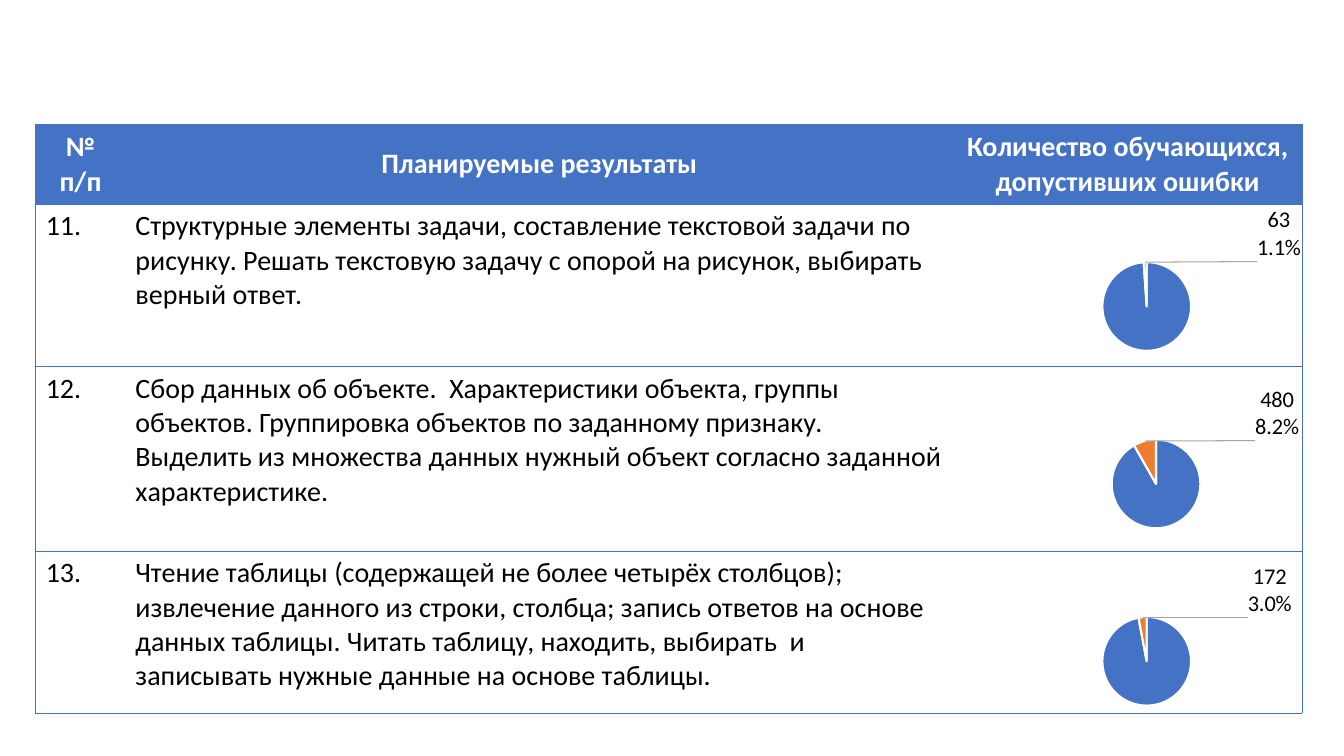
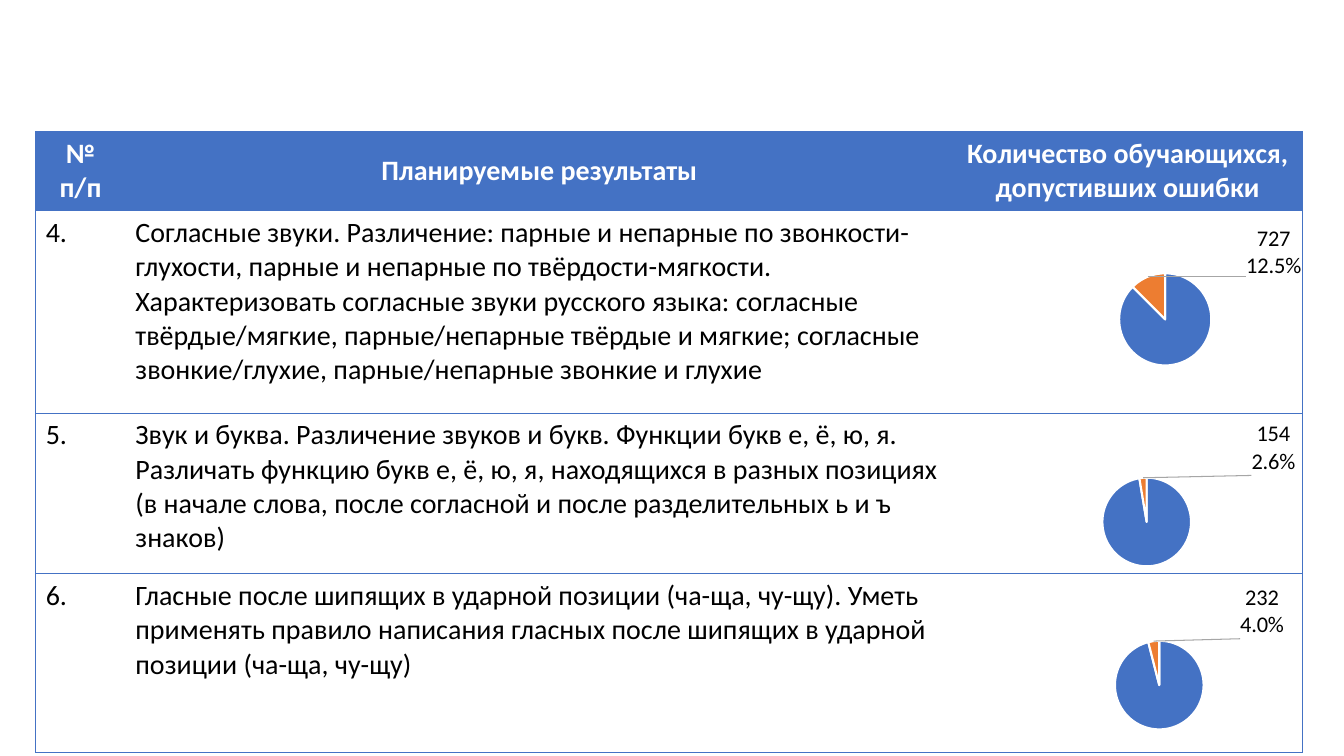
from pptx import Presentation
from pptx.chart.data import CategoryChartData
from pptx.dml.color import RGBColor
from pptx.enum.chart import XL_CHART_TYPE as ChartType
from pptx.enum.text import MSO_ANCHOR as Anchor, PP_ALIGN as Align
from pptx.oxml import parse_xml
from pptx.oxml.ns import nsdecls, qn
from pptx.util import Cm, Pt

COLORS = {"blue": "4472C4", "orange": "ED7D31", "white": "FFFFFF",
          "black": "000000", "leader": "A6A6A6"}
FONT = "Calibri"
HEADINGS = ("№ п/п", "Планируемые результаты",
            "Количество обучающихся, допустивших ошибки")
TABLE_LEFT = 0.9
COLUMN_WIDTHS = (2.26, 20.87, 8.78)
HEADER_HEIGHT = 2
CHART_WIDTH, CHART_HEIGHT = 7.85, 4.47
HEADER = {"bold": True, "color": "white", "align": Align.CENTER,
          "anchor": Anchor.MIDDLE}
BODY = {"bold": False, "color": "black", "align": Align.LEFT,
        "anchor": Anchor.TOP}

# Each row: number, planned result, height, pie.
# Each pie: left, top, values, centre, diameter, label offset;
# the last three are shares of the chart box.
SLIDES = [
    {"top": 3.14, "rows": [
        ("11.", "Структурные элементы задачи, составление текстовой задачи по "
         "рисунку. Решать текстовую задачу с опорой на рисунок, выбирать "
         "верный ответ.", 4.1,
         (24.97, 4.73, (5763, 63), (0.5, 0.67), 0.5, (0.43, 0.03))),
        ("12.", "Сбор данных об объекте.  Характеристики объекта, группы "
         "объектов. Группировка объектов по заданному признаку. Выделить из "
         "множества данных нужный объект согласно заданной характеристике.",
         4.65, (24.97, 9.2, (5346, 480), (0.53, 0.67), 0.5, (0.5, 0.03))),
        ("13.", "Чтение таблицы (содержащей не более четырёх столбцов); "
         "извлечение данного из строки, столбца; запись ответов на основе "
         "данных таблицы. Читать таблицу, находить, выбирать  и записывать "
         "нужные данные на основе таблицы.", 4.08,
         (24.97, 13.67, (5654, 172), (0.5, 0.67), 0.5, (0.48, 0.04))),
    ]},
    {"top": 3.31, "rows": [
        ("4.", "Согласные звуки. Различение: парные и непарные по "
         "звонкости-глухости, парные и непарные по твёрдости-мягкости. "
         "Характеризовать согласные звуки русского языка: согласные "
         "твёрдые/мягкие, парные/непарные твёрдые и мягкие; согласные "
         "звонкие/глухие, парные/непарные звонкие и глухие", 5.1,
         (24.97, 5.1, (5098, 727), (0.56, 0.66), 0.52, (0.5, 0.05))),
        ("5.", "Звук и буква. Различение звуков и букв. Функции букв е, ё, ю, "
         "я. Различать функцию букв е, ё, ю, я, находящихся в разных позициях "
         "(в начале слова, после согласной и после разделительных ь и ъ "
         "знаков)", 4.05,
         (24.97, 10.16, (5671, 154), (0.5, 0.67), 0.5, (0.42, 0.02))),
        ("6.", "Гласные после шипящих в ударной позиции (ча-ща, чу-щу). Уметь "
         "применять правило написания гласных после шипящих в ударной позиции "
         "(ча-ща, чу-щу)", 4.5,
         (25.13, 14.27, (5593, 232), (0.52, 0.67), 0.5, (0.42, 0.02))),
    ]},
]


def rgb(name):
    return RGBColor.from_string(COLORS[name])


def set_font(font, **values):
    font.color.rgb = rgb(values.pop("color"))
    for attribute, value in values.items():
        setattr(font, attribute, value)


def set_borders(cell, shown):
    """Draw thin blue lines on the shown sides and none on the others."""
    properties = cell._tc.get_or_add_tcPr()
    line = f'<a:solidFill><a:srgbClr val="{COLORS["blue"]}"/></a:solidFill>'
    for position, side in enumerate("LRTB"):
        fill = line if side in shown else "<a:noFill/>"
        properties.insert(position, parse_xml(
            f'<a:ln{side} {nsdecls("a")} w="6350">{fill}</a:ln{side}>'))


def fill_cell(cell, text, style):
    cell.vertical_anchor = style["anchor"]
    paragraph = cell.text_frame.paragraphs[0]
    paragraph.alignment = style["align"]
    if text:
        run = paragraph.add_run()
        run.text = text
        set_font(run.font, name=FONT, size=Pt(20), bold=style["bold"],
                 color=style["color"])
    if style is HEADER:
        cell.fill.solid()
        cell.fill.fore_color.rgb = rgb("blue")
    else:
        cell.fill.background()


def add_results_table(slide, top, rows):
    lines = [HEADINGS] + [(number, result, "") for number, result, *_ in rows]
    heights = [HEADER_HEIGHT] + [height for _, _, height, _ in rows]
    table = slide.shapes.add_table(
        len(lines), len(COLUMN_WIDTHS), Cm(TABLE_LEFT), Cm(top),
        Cm(sum(COLUMN_WIDTHS)), Cm(sum(heights))).table
    table.horz_banding = False
    for column, width in zip(table.columns, COLUMN_WIDTHS):
        column.width = Cm(width)
    for index, (row, height, texts) in enumerate(
            zip(table.rows, heights, lines)):
        row.height = Cm(height)
        for cell, text, sides in zip(row.cells, texts, ("L", "", "R")):
            fill_cell(cell, text, BODY if index else HEADER)
            set_borders(cell, sides + "TB")


def place_pie(chart, centre, diameter):
    """Set the plot area to a square around the centre."""
    width = diameter * CHART_HEIGHT / CHART_WIDTH
    box = {"x": centre[0] - width / 2, "y": centre[1] - diameter / 2,
           "w": width, "h": diameter}
    sizes = "".join(f'<c:{key} val="{value:.3f}"/>'
                    for key, value in box.items())
    plot_area = chart._chartSpace.chart.plotArea
    for layout in plot_area.findall(qn("c:layout")):
        plot_area.remove(layout)
    plot_area.insert(0, parse_xml(
        f'<c:layout {nsdecls("c")}><c:manualLayout>'
        '<c:layoutTarget val="inner"/><c:xMode val="edge"/>'
        f'<c:yMode val="edge"/>{sizes}</c:manualLayout></c:layout>'))


def label_errors(series, offset):
    """Label the second slice only, moved by the offset, with a leader."""
    content = (
        '<c:numFmt formatCode="0.0%" sourceLinked="0"/>'
        '<c:dLblPos val="outEnd"/><c:showLegendKey val="0"/>'
        '<c:showVal val="1"/><c:showCatName val="0"/><c:showSerName val="0"/>'
        '<c:showPercent val="1"/><c:showBubbleSize val="0"/>'
        '<c:separator>\n</c:separator>')
    labels = parse_xml(
        f'<c:dLbls {nsdecls("c", "a")}>'
        '<c:dLbl><c:idx val="0"/><c:delete val="1"/></c:dLbl>'
        '<c:dLbl><c:idx val="1"/><c:layout><c:manualLayout>'
        f'<c:x val="{offset[0]}"/><c:y val="{offset[1]}"/>'
        f'</c:manualLayout></c:layout>{content}</c:dLbl>{content}'
        '<c:showLeaderLines val="1"/><c:leaderLines><c:spPr><a:ln w="9525">'
        f'<a:solidFill><a:srgbClr val="{COLORS["leader"]}"/></a:solidFill>'
        '</a:ln></c:spPr></c:leaderLines></c:dLbls>')
    series._element.find(qn("c:cat")).addprevious(labels)


def add_error_pie(slide, left, top, values, centre, diameter, offset):
    data = CategoryChartData()
    data.categories = ["1", "2"]
    data.add_series("Series 1", values)
    chart = slide.shapes.add_chart(
        ChartType.PIE, Cm(left), Cm(top), Cm(CHART_WIDTH), Cm(CHART_HEIGHT),
        data).chart
    chart.has_title = chart.has_legend = False
    set_font(chart.font, name=FONT, size=Pt(16), color="black")
    plot = chart.plots[0]
    plot.vary_by_categories = True
    series = plot.series[0]
    for index, color in enumerate(("blue", "orange")):
        slice_format = series.points[index].format
        slice_format.fill.solid()
        slice_format.fill.fore_color.rgb = rgb(color)
        slice_format.line.color.rgb = rgb("white")
        slice_format.line.width = Pt(1.5)
    place_pie(chart, centre, diameter)
    label_errors(series, offset)


def add_results_slide(presentation, top, rows):
    slide = presentation.slides.add_slide(presentation.slide_layouts[6])
    add_results_table(slide, top, rows)
    for *_, pie in rows:
        add_error_pie(slide, *pie)


def main():
    presentation = Presentation()
    presentation.slide_width = Cm(33.87)
    presentation.slide_height = Cm(19.05)
    for content in SLIDES:
        add_results_slide(presentation, **content)
    presentation.save("out.pptx")


if __name__ == "__main__":
    main()
